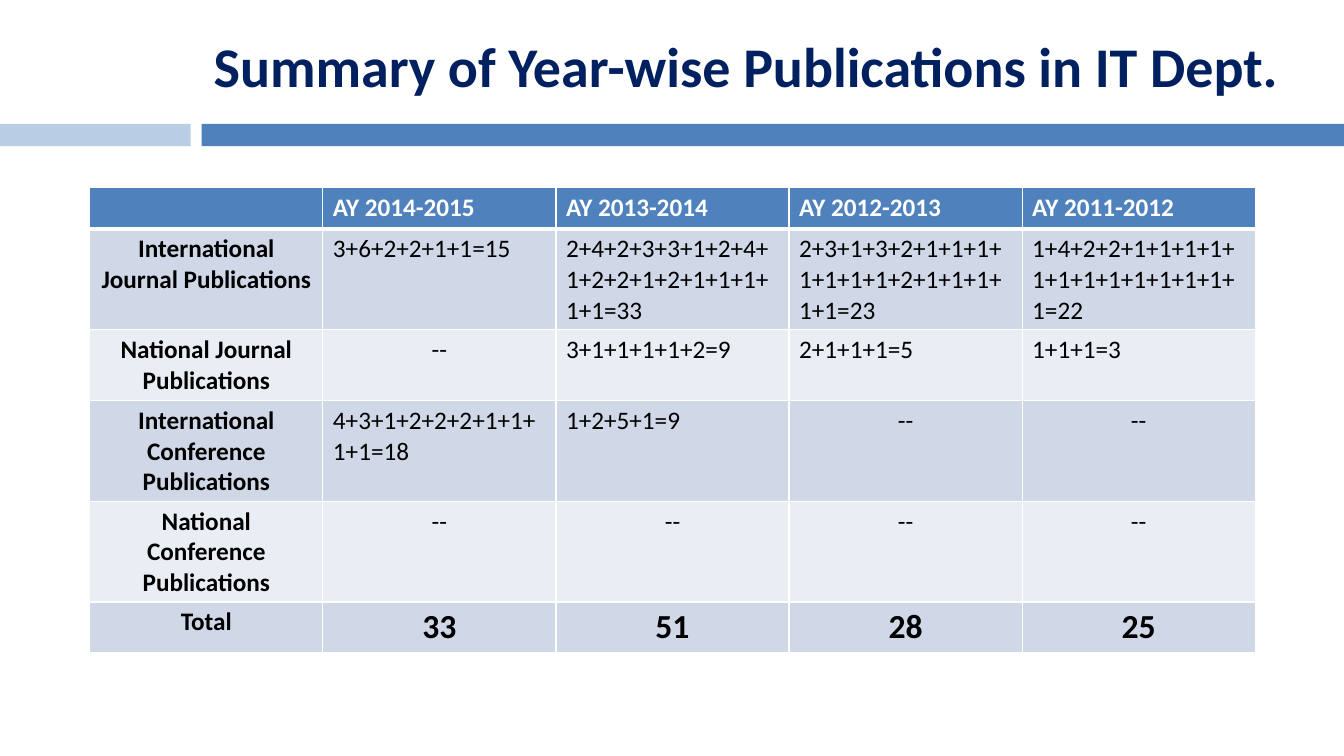
from dataclasses import dataclass

from lxml import etree
from pptx import Presentation, util as u
from pptx.dml.color import RGBColor
from pptx.enum import shapes, text
from pptx.oxml import ns


@dataclass(frozen=True)
class Theme:
    font: str = "Calibri"
    navy: str = "002060"
    blue: str = "4F81BD"
    pale: str = "B9CDE5"
    white: str = "FFFFFF"
    black: str = "000000"
    bands: tuple[str, str] = ("D0D8E8", "E9EDF4")
    head: int = 40
    body: int = 18
    total: int = 24
    thin: int = 1
    thick: int = 3


@dataclass(frozen=True)
class Box:
    """A frame in percent of the slide's width and height."""
    left: float
    top: float
    width: float
    height: float


@dataclass(frozen=True)
class Bar:
    box: Box
    color: str


@dataclass(frozen=True)
class Row:
    label: str
    sums: tuple[str, ...]
    size: int
    bold: bool = False


THEME = Theme()
WIDE, HIGH = u.Inches(13.33), u.Inches(7.5)
NONE = "--"

TITLE = Box(15, 2, 84.17, 13.33)
GRID = Box(6.68, 24.8, 86.72, 61.47)
LINE = 5.47  # least row height, percent of the slide's height

BARS = [
    Bar(Box(0, 16.4, 14.18, 2.93), THEME.pale),
    Bar(Box(15, 16.4, 85, 2.93), THEME.blue),
]
YEARS = ("AY 2014-2015", "AY 2013-2014", "AY 2012-2013", "AY 2011-2012")
ROWS = [
    Row("International Journal Publications",
        ("3+6+2+2+1+1=15",
         "2+4+2+3+3+1+2+4+1+2+2+1+2+1+1+1+1+1=33",
         "2+3+1+3+2+1+1+1+1+1+1+1+2+1+1+1+1+1=23",
         "1+4+2+2+1+1+1+1+1+1+1+1+1+1+1+1+1=22"), THEME.body),
    Row("National Journal Publications",
        (NONE, "3+1+1+1+1+2=9", "2+1+1+1=5", "1+1+1=3"), THEME.body),
    Row("International Conference Publications",
        ("4+3+1+2+2+2+1+1+1+1=18", "1+2+5+1=9", NONE, NONE), THEME.body),
    Row("National Conference Publications", (NONE,) * len(YEARS), THEME.body),
    Row("Total", ("33", "51", "28", "25"), THEME.total, bold=True),
]


def place(box: Box) -> tuple[int, int, int, int]:
    return (int(WIDE * box.left / 100), int(HIGH * box.top / 100),
            int(WIDE * box.width / 100), int(HIGH * box.height / 100))


def write(frame, words: str, size: int, color: str, bold: bool, mid: bool = False) -> None:
    para = frame.paragraphs[0]
    para.alignment = text.PP_ALIGN.CENTER if mid else text.PP_ALIGN.LEFT
    run = para.add_run()
    run.text = words
    form = {"name": THEME.font, "size": u.Pt(size), "bold": bold}
    for key, value in form.items():
        setattr(run.font, key, value)
    run.font.color.rgb = RGBColor.from_string(color)


def paint(cell, color: str, base: int) -> None:
    # Borders come before the fill in the cell's properties
    props = cell._tc.get_or_add_tcPr()
    for side, width in {"L": THEME.thin, "R": THEME.thin, "T": THEME.thin, "B": base}.items():
        edge = etree.SubElement(props, ns.qn(f"a:ln{side}"), w=str(u.Pt(width)))
        fill = etree.SubElement(edge, ns.qn("a:solidFill"))
        etree.SubElement(fill, ns.qn("a:srgbClr"), val=THEME.white)
    cell.fill.solid()
    cell.fill.fore_color.rgb = RGBColor.from_string(color)


def draw_bar(slide, bar: Bar) -> None:
    shape = slide.shapes.add_shape(shapes.MSO_SHAPE.RECTANGLE, *place(bar.box))
    shape.shadow.inherit = False
    shape.fill.solid()
    shape.fill.fore_color.rgb = RGBColor.from_string(bar.color)
    shape.line.fill.background()


def draw_title(slide, words: str) -> None:
    frame = slide.shapes.add_textbox(*place(TITLE)).text_frame
    form = {
        "word_wrap": True,
        "vertical_anchor": text.MSO_ANCHOR.MIDDLE,
        "margin_left": u.Inches(0.12),
        "margin_right": u.Inches(0.12),
        "margin_top": u.Inches(0.06),
        "margin_bottom": u.Inches(0.06),
    }
    for key, value in form.items():
        setattr(frame, key, value)
    write(frame, words, THEME.head, THEME.navy, bold=True)


def draw_table(slide) -> None:
    holder = slide.shapes.add_table(len(ROWS) + 1, len(YEARS) + 1, *place(GRID))
    table = holder.table
    for line in table.rows:
        line.height = int(HIGH * LINE / 100)
    holder.height = place(GRID)[3]

    # Header row
    for col, year in enumerate(("", *YEARS)):
        cell = table.cell(0, col)
        paint(cell, THEME.blue, THEME.thick)
        if year:
            write(cell.text_frame, year, THEME.body, THEME.white, bold=True)

    # Body rows in alternating bands
    for num, row in enumerate(ROWS):
        for col, words in enumerate((row.label, *row.sums)):
            cell = table.cell(num + 1, col)
            paint(cell, THEME.bands[num % 2], THEME.thin)
            label = col == 0
            write(cell.text_frame, words, THEME.body if label else row.size, THEME.black,
                  bold=label or row.bold, mid=label or row.bold or words == NONE)


def main() -> None:
    deck = Presentation()
    deck.slide_width, deck.slide_height = WIDE, HIGH
    slide = deck.slides.add_slide(deck.slide_layouts[6])
    for bar in BARS:
        draw_bar(slide, bar)
    draw_title(slide, "Summary of Year-wise Publications in IT Dept.")
    draw_table(slide)
    deck.save("out.pptx")


if __name__ == "__main__":
    main()
